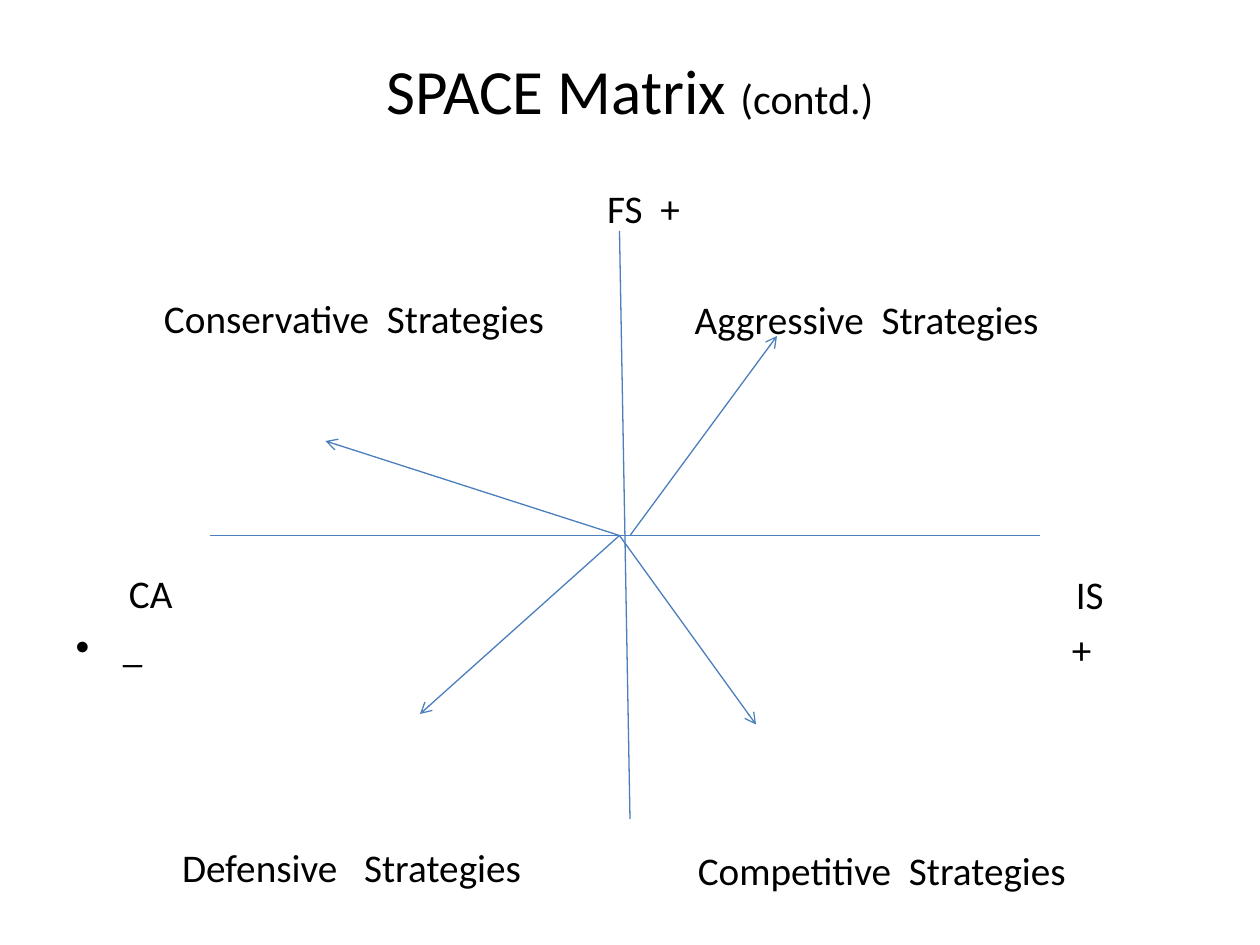
from lxml import etree
from pptx import Presentation
from pptx.dml.color import RGBColor
from pptx.enum.shapes import MSO_CONNECTOR
from pptx.enum.text import MSO_ANCHOR, MSO_AUTO_SIZE, PP_ALIGN
from pptx.oxml.ns import qn
from pptx.util import Pt

STRAIGHT = MSO_CONNECTOR.STRAIGHT
MIDDLE, TOP = MSO_ANCHOR.MIDDLE, MSO_ANCHOR.TOP
CENTER = PP_ALIGN.CENTER
NO_AUTOFIT = MSO_AUTO_SIZE.NONE

FONT = "Calibri"
BLACK = "000000"
BLUE = "4B7EBC"
LABEL_SIZE = 22.4
LINE_HEIGHT = 27.34
LINE_PITCH = 31.5
BULLET_INDENT = 27
INSET_X, INSET_Y = 7.2, 3.6

# (line number, bulleted, indent, text)
LEFT_LABELS = [
    (0, False, 303.7, "FS  +"),
    (2, False, 50.5, "Conservative  Strategies"),
    (7, False, 30.5, "CA"),
    (8, True, BULLET_INDENT, "_"),
    (12, False, 60.8, "Defensive   Strategies"),
]
# (line number, offset, width, text)
RIGHT_LABELS = [
    (2, 353.9, 230, "Aggressive  Strategies"),
    (7, 571.7, 40, "IS"),
    (8, 569.4, 40, "+"),
    (12, 355.7, 230, "Competitive  Strategies"),
]
AXES = [((0, 174), (474, 174)), ((234, 0), (240, 336))]
STRATEGY_ARROWS = [
    ((240, 174), (324, 60)),
    ((234, 174), (66, 120)),
    ((234, 174), (120, 276)),
    ((234, 174), (312, 282)),
]


def color(hex_code):
    """Turn a hex string into a colour."""
    return RGBColor.from_string(hex_code)


def place(placeholder, box, anchor):
    """Move a placeholder to a box and fix its text settings."""
    placeholder.left, placeholder.top, placeholder.width, placeholder.height = map(Pt, box)
    frame = placeholder.text_frame
    frame.auto_size = NO_AUTOFIT
    frame.word_wrap = True
    frame.vertical_anchor = anchor
    return frame


def style(run, size):
    """Give a run the slide's font at a size."""
    run.font.name = FONT
    run.font.size = Pt(size)
    run.font.color.rgb = color(BLACK)


def add_title(slide, box):
    """Write the title with its smaller suffix."""
    heading = place(slide.shapes.title, box, MIDDLE).paragraphs[0]
    heading.alignment = CENTER
    for text, size in (("SPACE Matrix ", 36), ("(contd.)", 24)):
        run = heading.add_run()
        run.text = text
        style(run, size)


def set_indent(paragraph, indent, bulleted):
    """Set the indent and bullet of a label."""
    properties = paragraph._p.get_or_add_pPr()
    properties.set("marL", str(Pt(indent)))
    properties.set("indent", str(Pt(-indent if bulleted else 0)))
    if bulleted:
        etree.SubElement(properties, qn("a:buChar"), char="•")
    else:
        etree.SubElement(properties, qn("a:buNone"))


def add_left_labels(slide, box):
    """Write the top and left labels in the body placeholder."""
    frame = place(slide.placeholders[1], box, TOP)
    previous = 0
    for index, (line, bulleted, indent, text) in enumerate(LEFT_LABELS):
        label = frame.paragraphs[0] if index == 0 else frame.add_paragraph()
        label.text = text
        gap = (line - previous) * LINE_PITCH - LINE_HEIGHT
        label.space_before = Pt(round(max(0, gap), 2))
        set_indent(label, indent, bulleted)
        style(label.runs[0], LABEL_SIZE)
        previous = line


def add_right_labels(slide, box):
    """Write the right labels on the same lines as the left ones."""
    left, top, _, _ = box
    for line, offset, width, text in RIGHT_LABELS:
        label_box = (left + offset, top + line * LINE_PITCH, width + 2 * INSET_X, LINE_HEIGHT + 2 * INSET_Y)
        label = slide.shapes.add_textbox(*map(Pt, label_box))
        label.text_frame.word_wrap = True
        label.text_frame.text = text
        style(label.text_frame.paragraphs[0].runs[0], LABEL_SIZE)


def add_line(slide, origin, start, end, arrow=False):
    """Draw a line between two points measured from an origin."""
    points = [Pt(base + shift) for point in (start, end) for base, shift in zip(origin, point)]
    connector = slide.shapes.add_connector(STRAIGHT, *points)
    connector.line.color.rgb = color(BLUE)
    connector.line.width = Pt(0.75)
    if arrow:
        etree.SubElement(connector.line._get_or_add_ln(), qn("a:tailEnd"), type="arrow")
    etree.SubElement(connector._element.spPr, qn("a:effectLst"))


def add_matrix(slide, origin):
    """Draw the two axes and the four strategy arrows."""
    for start, end in AXES:
        add_line(slide, origin, start, end)
    for start, end in STRATEGY_ARROWS:
        add_line(slide, origin, start, end, arrow=True)


def main():
    """Build and save the slide."""
    deck = Presentation()
    deck.slide_width, deck.slide_height = Pt(720), Pt(540)
    slide = deck.slides.add_slide(deck.slide_layouts[1])
    labels_box = (36, 102, 648, 402)
    add_title(slide, (36, 12, 648, 78))
    add_left_labels(slide, labels_box)
    add_right_labels(slide, labels_box)
    add_matrix(slide, (120, 132))
    deck.save("out.pptx")


if __name__ == "__main__":
    main()
